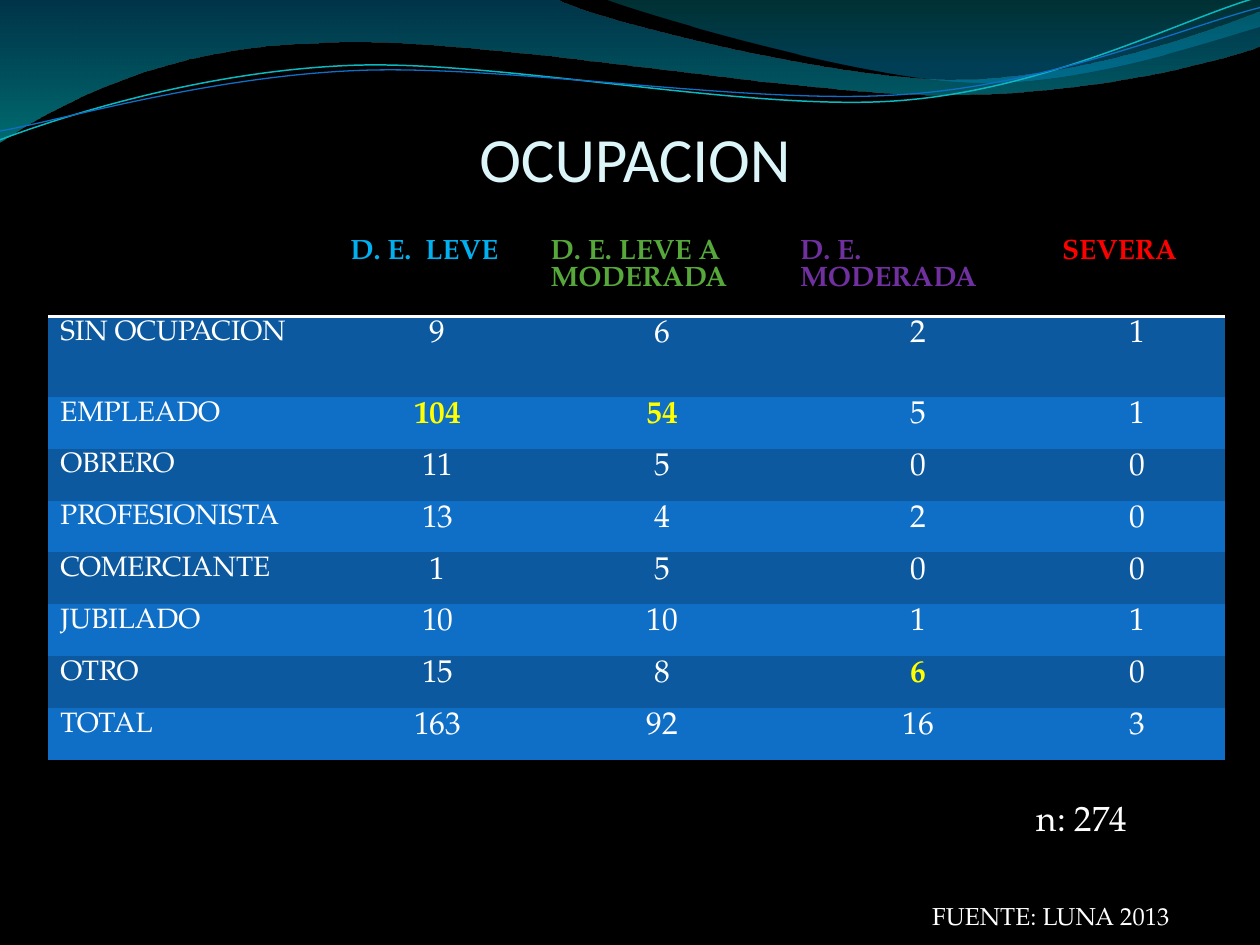
from lxml.etree import SubElement
from pptx import Presentation
from pptx.dml.color import RGBColor
from pptx.enum.text import MSO_ANCHOR, PP_ALIGN
from pptx.oxml import parse_xml
from pptx.oxml.ns import nsdecls, qn
from pptx.util import Inches, Pt

# Content
TITLE = "OCUPACION"
HEADERS = [("", "FFFFFF"), ("D. E.  LEVE", "00B0F0"), ("D. E. LEVE A MODERADA", "55A839"),
           ("D. E. MODERADA", "7030A0"), ("SEVERA", "FF0000")]
ROWS = [
    ("SIN OCUPACION", 9, 6, 2, 1),
    ("EMPLEADO", 104, 54, 5, 1),
    ("OBRERO", 11, 5, 0, 0),
    ("PROFESIONISTA", 13, 4, 2, 0),
    ("COMERCIANTE", 1, 5, 0, 0),
    ("JUBILADO", 10, 10, 1, 1),
    ("OTRO", 15, 8, 6, 0),
    ("TOTAL", 163, 92, 16, 3),
]
HIGHLIGHTS = {("EMPLEADO", 1), ("EMPLEADO", 2), ("OTRO", 3)}
NOTES = [("n: 274", 20, (8.13, 6.27, 1.26, 0.44)),
         ("FUENTE: LUNA 2013", 14, (7.3, 7.1, 2.43, 0.34))]

FONT = "TeX Gyre Pagella"
COL_WIDTHS = [2.3, 1.59, 1.98, 2.08, 1.39]
TABLE_HEIGHT, TALL_ROW = 4.16, 0.64
BANDS = ["0C599F", "0F6FC6"]
NO_GRID_STYLE = "{2D5ABB26-0587-4C30-8999-92F81FD0307C}"

# Waves: two numbers are a line end, six are a Bezier curve.
# Gradient stops: position, colour, opacity in percent
BANDS_OF_WAVE = [
    ([(0, 0), (4.4, -0.01), (4.76, 0.17, 6.64, 0.63, 7.58, 0.63),
      (8.53, 0.63, 9.58, 0.26, 10, 0.09), (10.01, 0.36),
      (9.83, 0.44, 8.7, 0.76, 7.46, 0.75), (6.22, 0.75, 3.82, 0.28, 2.57, 0.34),
      (1.29, 0.36, 0.46, 0.83, -0.01, 1.13)],
     [(0, "0074A1", 45), (1, "00C6CF", 55)]),
    ([(4.79, -0.01), (5.09, 0.11, 6.82, 0.62, 7.69, 0.65),
      (8.56, 0.69, 9.61, 0.32, 10, 0.21), (10, 0)],
     [(0, "00A1A9", 30), (0.8, "008BBF", 45)]),
]
LINES_OF_WAVE = [
    ([(0, 1.11), (0.48, 0.93, 1.58, 0.57, 2.77, 0.52), (3.95, 0.47, 5.93, 0.89, 7.13, 0.8),
      (8.33, 0.71, 9.38, 0.15, 9.98, -0.02)], "0AB8BF", 0.85),
    ([(0, 1.04), (0.47, 0.96, 1.64, 0.61, 2.83, 0.56), (4.03, 0.51, 5.97, 0.84, 7.17, 0.75),
      (8.36, 0.67, 9.41, 0.21, 10, 0.06)], "0F6FC6", 0.75),
]


def rgb(value):
    return RGBColor.from_string(value)


def set_font(p, size, color, name=FONT, bold=False):
    p.font.name, p.font.size, p.font.bold = name, Pt(size), bold
    p.font.color.rgb = rgb(color)


def add_wave(s, outline, close):
    """Build the outline from its end points, then bend the curved segments."""
    ends = [(Inches(part[-2]), Inches(part[-1])) for part in outline]
    builder = s.shapes.build_freeform(*ends[0], scale=1.0)
    builder.add_line_segments(ends[1:], close=close)
    sp = builder.convert_to_shape()
    sp.shadow.inherit = False
    segments = list(sp._element.iter(qn("a:lnTo")))
    for segment, part in zip(segments, outline[1:]):
        if len(part) == 6:
            curve = segment.makeelement(qn("a:cubicBezTo"))
            for x, y in zip(part[::2], part[1::2]):
                pt = SubElement(curve, qn("a:pt"))
                pt.set("x", str(Inches(x) - sp.left))
                pt.set("y", str(Inches(y) - sp.top))
            segment.getparent().replace(segment, curve)
    return sp


def fill_cell(cell, text, size, color, fill, bold=False, align=PP_ALIGN.LEFT):
    cell.fill.solid()
    cell.fill.fore_color.rgb = rgb(fill)
    cell.margin_top = Inches(0.03)
    cell.text = str(text)
    p = cell.text_frame.paragraphs[0]
    p.alignment = align
    set_font(p, size, color, bold=bold)


prs = Presentation()
prs.slide_width, prs.slide_height = Inches(10), Inches(7.5)
s = prs.slides.add_slide(prs.slide_layouts[5])
s.background.fill.solid()
s.background.fill.fore_color.rgb = rgb("000000")

# Waves at the top
for outline, stops in BANDS_OF_WAVE:
    sp = add_wave(s, outline, True)
    sp.line.fill.background()
    sp.fill.gradient()
    sp.fill.gradient_angle = 270
    for stop, (position, color, opacity) in zip(sp.fill.gradient_stops, stops):
        stop.position = position
        stop.color.rgb = rgb(color)
    colors = list(sp._element.spPr.iter(qn("a:srgbClr")))
    for node, (_, _, opacity) in zip(colors, stops):
        SubElement(node, qn("a:alpha")).set("val", str(opacity * 1000))
for outline, color, width in LINES_OF_WAVE:
    sp = add_wave(s, outline, False)
    sp.fill.background()
    sp.line.color.rgb = rgb(color)
    sp.line.width = Pt(width)

# Title
title = s.shapes.title
title.left, title.top, title.width, title.height = map(Inches, (0.5, 0.77, 9.08, 0.78))
tf = title.text_frame
tf.text = TITLE
tf.vertical_anchor = MSO_ANCHOR.BOTTOM
tf.margin_left = tf.margin_right = tf.margin_bottom = 0
tf.paragraphs[0].alignment = PP_ALIGN.CENTER
set_font(tf.paragraphs[0], 36, "DBF5F9", "Calibri")

# Table: two tall rows, the others share the rest
short_rows = len(ROWS) - 1
heights = [TALL_ROW] * 2 + [(TABLE_HEIGHT - 2 * TALL_ROW) / short_rows] * short_rows
table = s.shapes.add_table(len(heights), len(COL_WIDTHS), Inches(0.38), Inches(1.87),
                           Inches(sum(COL_WIDTHS)), Inches(TABLE_HEIGHT)).table
table.first_row = table.horz_banding = False
table._tbl.tblPr.find(qn("a:tableStyleId")).text = NO_GRID_STYLE
for column, width in zip(table.columns, COL_WIDTHS):
    column.width = Inches(width)
for row, height in zip(table.rows, heights):
    row.height = Inches(height)

for c, (text, color) in enumerate(HEADERS):
    cell = table.cell(0, c)
    fill_cell(cell, text, 16, color, "000000", bold=True)
    cell._tc.get_or_add_tcPr().insert(0, parse_xml(
        f'<a:lnB {nsdecls("a")} w="{Pt(2)}"><a:solidFill><a:srgbClr val="FFFFFF"/>'
        '</a:solidFill></a:lnB>'))
for r, (label, *values) in enumerate(ROWS, 1):
    fill = BANDS[(r - 1) % 2]
    fill_cell(table.cell(r, 0), label, 16, "FFFFFF", fill)
    for c, value in enumerate(values, 1):
        marked = (label, c) in HIGHLIGHTS
        fill_cell(table.cell(r, c), value, 18, "FFFF00" if marked else "FFFFFF", fill,
                  marked, PP_ALIGN.CENTER)

# Sample size and source
for text, size, box in NOTES:
    tf = s.shapes.add_textbox(*map(Inches, box)).text_frame
    tf.word_wrap = True
    tf.text = text
    set_font(tf.paragraphs[0], size, "FFFFFF")

prs.save("out.pptx")
